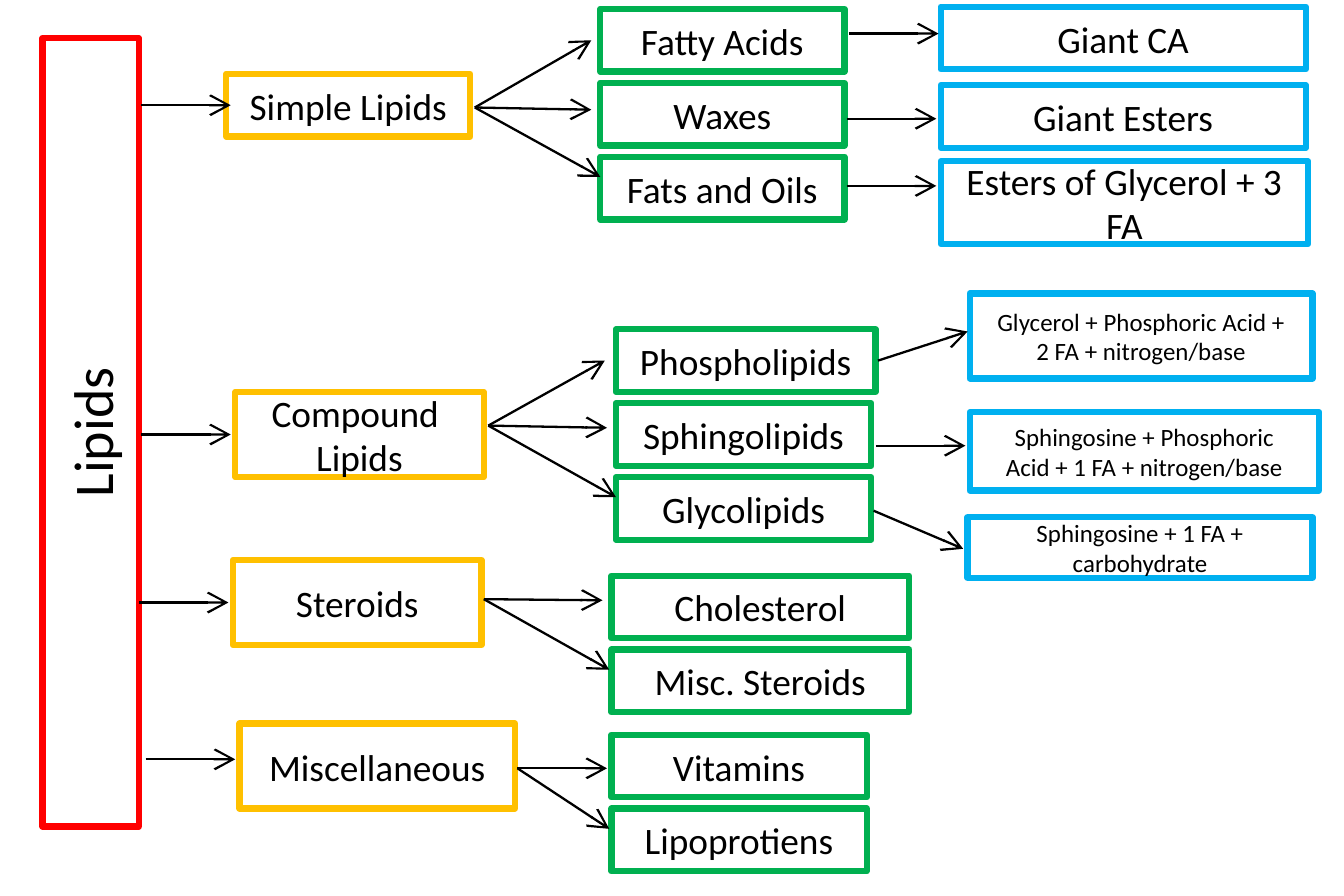
"""Builds a one-slide tree of the classes of lipids."""
from lxml.etree import SubElement
from pptx import Presentation
from pptx.dml.color import RGBColor
from pptx.enum.shapes import MSO_CONNECTOR, MSO_SHAPE
from pptx.enum.text import MSO_ANCHOR, PP_ALIGN
from pptx.oxml.ns import qn
from pptx.util import Inches, Pt

WHITE = RGBColor(0xFF, 0xFF, 0xFF)
BLACK = RGBColor(0, 0, 0)
RED = RGBColor(0xFF, 0, 0)
GOLD = RGBColor(0xFF, 0xC0, 0)
GREEN = RGBColor(0, 0xB0, 0x50)
BLUE = RGBColor(0, 0xB0, 0xF0)

COLS, ROWS = 600, 400
ROOT = ("Lipids", (19, 17, 43, 352))

# class: name, box, entry arrow start, hub of the fan, left and top of its kinds
# kind: name, width, tip of its fan arrow
CLASSES = [
    ("Simple Lipids", (101, 33, 109, 28), (63, 47), (212, 48), (268, 4), [
        ("Fatty Acids", 109, (264, 18)),
        ("Waxes", 109, (264, 49)),
        ("Fats and Oils", 109, (268, 79))]),
    ("Compound \nLipids", (105, 175, 111, 38), (63, 194), (218, 190), (275, 147), [
        ("Phospholipids", 116, (270, 161)),
        ("Sphingolipids", 114, (271, 191)),
        ("Glycolipids", 114, (275, 222))]),
    ("Steroids", (104, 250, 111, 38), (62, 269), (216, 267.5), (273, 257), [
        ("Cholesterol", 133, (269, 268)),
        ("Misc. Steroids", 133, (272, 299))]),
    ("Miscellaneous", (107, 323, 123, 38), (65, 339), (231, 343), (273, 328), [
        ("Vitamins", 114, (271, 343)),
        ("Lipoprotiens", 114, (272, 370))]),
]

# make-up: text, size, box, arrow start, arrow drop
MAKEUP = [
    ("Giant CA", 12, (420, 3, 163, 28), (379, 15), 0),
    ("Giant Esters", 12, (420, 38, 163, 28), (378, 53), 0),
    ("Esters of Glycerol + 3 FA", 12, (420, 72, 164, 37), (378, 83), 0),
    ("Glycerol + Phosphoric Acid + 2 FA + nitrogen/base", 8,
     (433, 131, 153, 38), (392, 161), -13),
    ("Sphingosine + Phosphoric Acid + 1 FA + nitrogen/base", 8,
     (433, 184, 156, 35), (391, 199), 0),
    ("Sphingosine + 1 FA + carbohydrate", 8,
     (432, 231, 154, 27), (390, 228), 17),
]
STEP, HIGH, REACH = 33, 28, 40

deck = Presentation()
deck.slide_width, deck.slide_height = Inches(6), Inches(4)
slide = deck.slides.add_slide(deck.slide_layouts[6])


def across(col):
    return round(deck.slide_width * col / COLS)


def down(row):
    return round(deck.slide_height * row / ROWS)


def box(text, place, color, size=12):
    left, top, wide, high = place
    shape = slide.shapes.add_shape(
        MSO_SHAPE.RECTANGLE, across(left), down(top), across(wide), down(high))
    shape.shadow.inherit = False
    shape.fill.background()
    shape.line.color.rgb = color
    shape.line.width = Pt(2)
    frame = shape.text_frame
    frame.word_wrap = True
    frame.vertical_anchor = MSO_ANCHOR.MIDDLE
    for index, line in enumerate(text.split("\n")):
        para = frame.add_paragraph() if index else frame.paragraphs[0]
        para.alignment = PP_ALIGN.CENTER
        run = para.add_run()
        run.text = line
        run.font.name = "Calibri"
        run.font.size = Pt(size)
        run.font.color.rgb = BLACK
    return shape


def arrow(start, end):
    line = slide.shapes.add_connector(
        MSO_CONNECTOR.STRAIGHT, across(start[0]), down(start[1]),
        across(end[0]), down(end[1]))
    line.line.color.rgb = BLACK
    line.line.width = Pt(0.75)
    props = line.line._get_or_add_ln()
    SubElement(props, qn("a:tailEnd"), type="arrow")
    SubElement(props.getparent(), qn("a:effectLst"))


root = box(*ROOT, RED, 18)
root.fill.solid()
root.fill.fore_color.rgb = WHITE
root.text_frame._txBody.bodyPr.set("vert", "vert270")

for name, place, start, hub, (left, top), kinds in CLASSES:
    box(name, place, GOLD)
    arrow(start, (start[0] + REACH, start[1]))
    for row, (kind, wide, tip) in enumerate(kinds):
        box(kind, (left, top + row * STEP, wide, HIGH), GREEN)
        arrow(hub, tip)

for text, size, place, start, drop in MAKEUP:
    box(text, place, BLUE, size)
    arrow(start, (start[0] + REACH, start[1] + drop))

deck.save("out.pptx")
